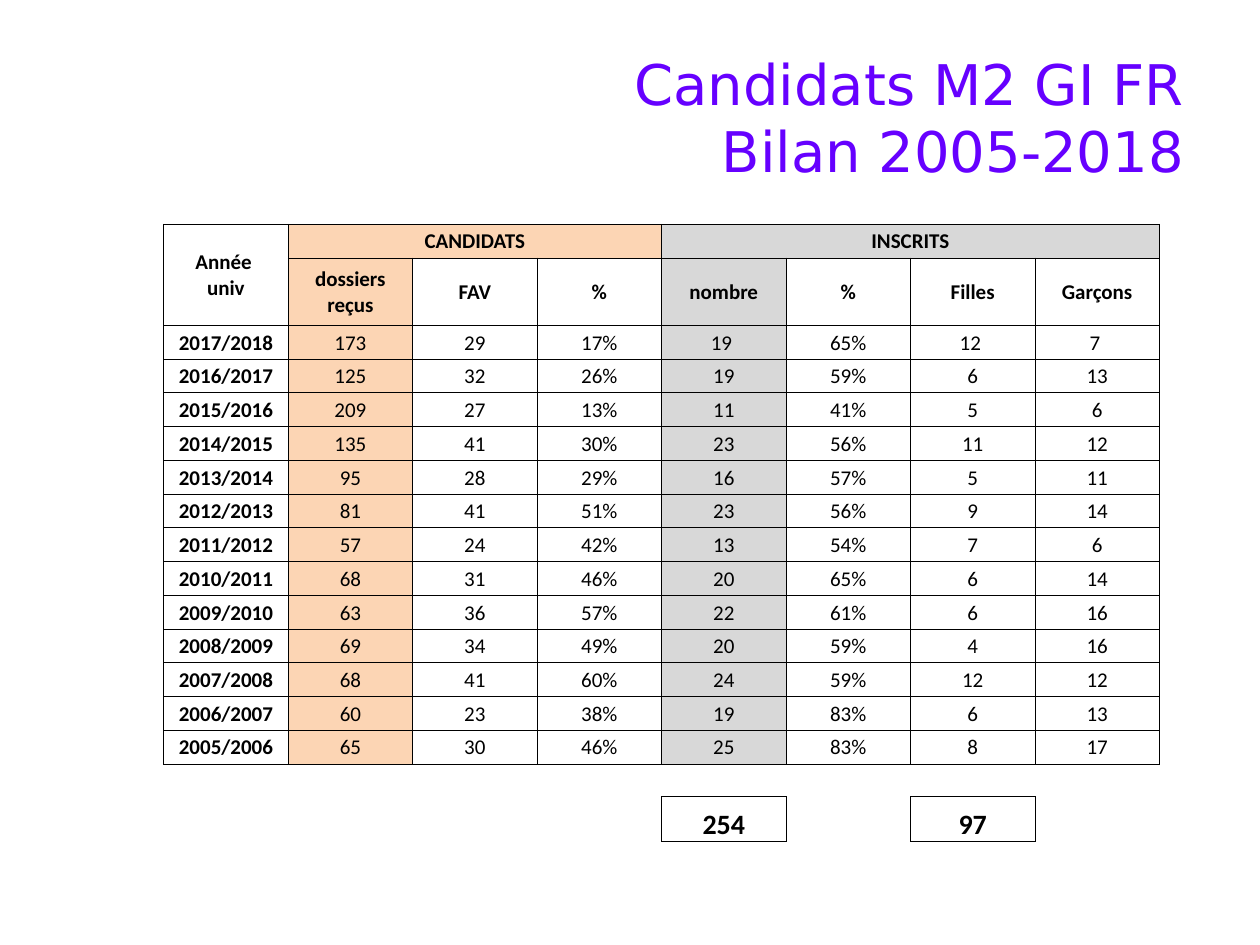
from typing import NamedTuple

import pptx
import pptx.dml.color
import pptx.enum.text
import pptx.oxml
import pptx.oxml.ns
import pptx.util

Cm = pptx.util.Cm
Pt = pptx.util.Pt
RGBColor = pptx.dml.color.RGBColor
Align = pptx.enum.text.PP_ALIGN
Anchor = pptx.enum.text.MSO_ANCHOR

BLACK = RGBColor(0x00, 0x00, 0x00)
WHITE = RGBColor(0xFF, 0xFF, 0xFF)
VIOLET = RGBColor(0x66, 0x00, 0xFF)
PEACH = RGBColor(0xFC, 0xD5, 0xB4)
GREY = RGBColor(0xD8, 0xD8, 0xD8)


class TextStyle(NamedTuple):
    font: str
    size: int
    color: RGBColor
    bold: bool = False


class YearResult(NamedTuple):
    year: str
    received: str
    accepted: str
    accepted_share: str
    enrolled: str
    enrolled_share: str
    girls: str
    boys: str


TITLE = TextStyle("DejaVu Sans", 32, VIOLET)
HEADER = TextStyle("Calibri", 12, BLACK, True)
BODY = TextStyle("Calibri", 12, BLACK)
TOTAL = TextStyle("Calibri", 16, BLACK, True)

GROUPS = ("Année \nuniv", "CANDIDATS", "", "", "INSCRITS", "", "", "")
LABELS = ("", "dossiers reçus", "FAV", "%", "nombre", "%", "Filles", "Garçons")
RESULTS = (
    YearResult("2017/2018", "173", "29", "17%", "19 ", "65%", "12 ", "7 "),
    YearResult("2016/2017", "125", "32", "26%", "19", "59%", "6", "13"),
    YearResult("2015/2016", "209", "27", "13%", "11", "41%", "5", "6"),
    YearResult("2014/2015", "135", "41", "30%", "23", "56%", "11", "12"),
    YearResult("2013/2014", "95", "28", "29%", "16", "57%", "5", "11"),
    YearResult("2012/2013", "81", "41", "51%", "23", "56%", "9", "14"),
    YearResult("2011/2012", "57", "24", "42%", "13", "54%", "7", "6"),
    YearResult("2010/2011", "68", "31", "46%", "20", "65%", "6", "14"),
    YearResult("2009/2010", "63", "36", "57%", "22", "61%", "6", "16"),
    YearResult("2008/2009", "69", "34", "49%", "20", "59%", "4", "16"),
    YearResult("2007/2008", "68", "41", "60%", "24", "59%", "12", "12"),
    YearResult("2006/2007", "60", "23", "38%", "19", "83%", "6", "13"),
    YearResult("2005/2006", "65", "30", "46%", "25", "83%", "8", "17"),
)
GAP = ("",) * 8
TOTALS = ("", "", "", "", "254", "", "97", "")
ROWS = (GROUPS, LABELS, *RESULTS, GAP, TOTALS)
GAP_ROW = len(ROWS) - 2
TOTAL_ROW = len(ROWS) - 1
COLUMN_COUNT = len(LABELS)
COLUMN_WIDTH = Cm(2.51)
ROW_HEIGHT = Cm(0.68)
SPECIAL_HEIGHTS = {1: Cm(1.36), GAP_ROW: Cm(0.66), TOTAL_ROW: Cm(0.91)}


def write_text(paragraph, text: str, style: TextStyle, alignment) -> None:
    paragraph.alignment = alignment
    for index, line in enumerate(text.split("\n")):
        if index:
            paragraph.add_line_break()
        run = paragraph.add_run()
        run.text = line
        run.font.name = style.font
        run.font.size = Pt(style.size)
        run.font.bold = style.bold
        run.font.color.rgb = style.color


def add_title(slide, text: str) -> None:
    shape = slide.shapes.add_textbox(Cm(6.91), Cm(0.76), Cm(17.22), Cm(3.18))
    shape.text_frame.word_wrap = True
    shape.text_frame.vertical_anchor = Anchor.MIDDLE
    write_text(shape.text_frame.paragraphs[0], text, TITLE, Align.RIGHT)


def is_boxed(row: int, column: int) -> bool:
    if not 0 <= column < COLUMN_COUNT:
        return False
    return 0 <= row < GAP_ROW or (row == TOTAL_ROW and bool(TOTALS[column]))


def set_borders(cell, row: int, column: int) -> None:
    properties = cell._tc.get_or_add_tcPr()
    neighbours = {
        "lnL": (row, column - 1),
        "lnR": (row, column + 1),
        "lnT": (row - 1, column),
        "lnB": (row + 1, column),
    }
    for tag, neighbour in neighbours.items():
        visible = is_boxed(row, column) or is_boxed(*neighbour)
        paint = f'<a:solidFill><a:srgbClr val="{BLACK}"/></a:solidFill>' if visible else "<a:noFill/>"
        namespace = pptx.oxml.ns.nsdecls("a")
        properties.append(
            pptx.oxml.parse_xml(f'<a:{tag} {namespace} w="{Pt(0.5)}">{paint}</a:{tag}>')
        )


def fill_color(row: int, column: int) -> RGBColor:
    if row == 0 and column:
        return PEACH if column < 4 else GREY
    if row < GAP_ROW:
        return {1: PEACH, 4: GREY}.get(column, WHITE)
    return WHITE


def text_style(row: int, column: int) -> TextStyle:
    if row == TOTAL_ROW:
        return TOTAL
    return HEADER if row < 2 or column == 0 else BODY


def format_cell(cell, text: str, row: int, column: int) -> None:
    cell.margin_left = cell.margin_right = cell.margin_top = Cm(0.03)
    cell.margin_bottom = 0
    cell.vertical_anchor = Anchor.BOTTOM if row == TOTAL_ROW else Anchor.MIDDLE
    set_borders(cell, row, column)
    cell.fill.solid()
    cell.fill.fore_color.rgb = fill_color(row, column)
    paragraph = cell.text_frame.paragraphs[0]
    if text:
        write_text(paragraph, text, text_style(row, column), Align.CENTER)
    else:
        paragraph._p.get_or_add_endParaRPr().set("sz", str(BODY.size * 100))


def add_results_table(slide) -> None:
    heights = [SPECIAL_HEIGHTS.get(row, ROW_HEIGHT) for row in range(len(ROWS))]
    frame = slide.shapes.add_table(
        len(ROWS), COLUMN_COUNT, Cm(3.3), Cm(4.52), COLUMN_WIDTH * COLUMN_COUNT, sum(heights)
    )
    table = frame.table
    table.first_row = False
    table.horz_banding = False
    for column in table.columns:
        column.width = COLUMN_WIDTH
    for table_row, height in zip(table.rows, heights):
        table_row.height = height
    for row, texts in enumerate(ROWS):
        for column, text in enumerate(texts):
            format_cell(table.cell(row, column), text, row, column)
    for first, last in (((0, 0), (1, 0)), ((0, 1), (0, 3)), ((0, 4), (0, 7))):
        table.cell(*first).merge(table.cell(*last))


def main() -> None:
    presentation = pptx.Presentation()
    presentation.slide_width = Cm(25.4)
    presentation.slide_height = Cm(19.05)
    slide = presentation.slides.add_slide(presentation.slide_layouts[6])
    add_title(slide, "Candidats M2 GI FR\nBilan 2005-2018")
    add_results_table(slide)
    presentation.save("out.pptx")


if __name__ == "__main__":
    main()
